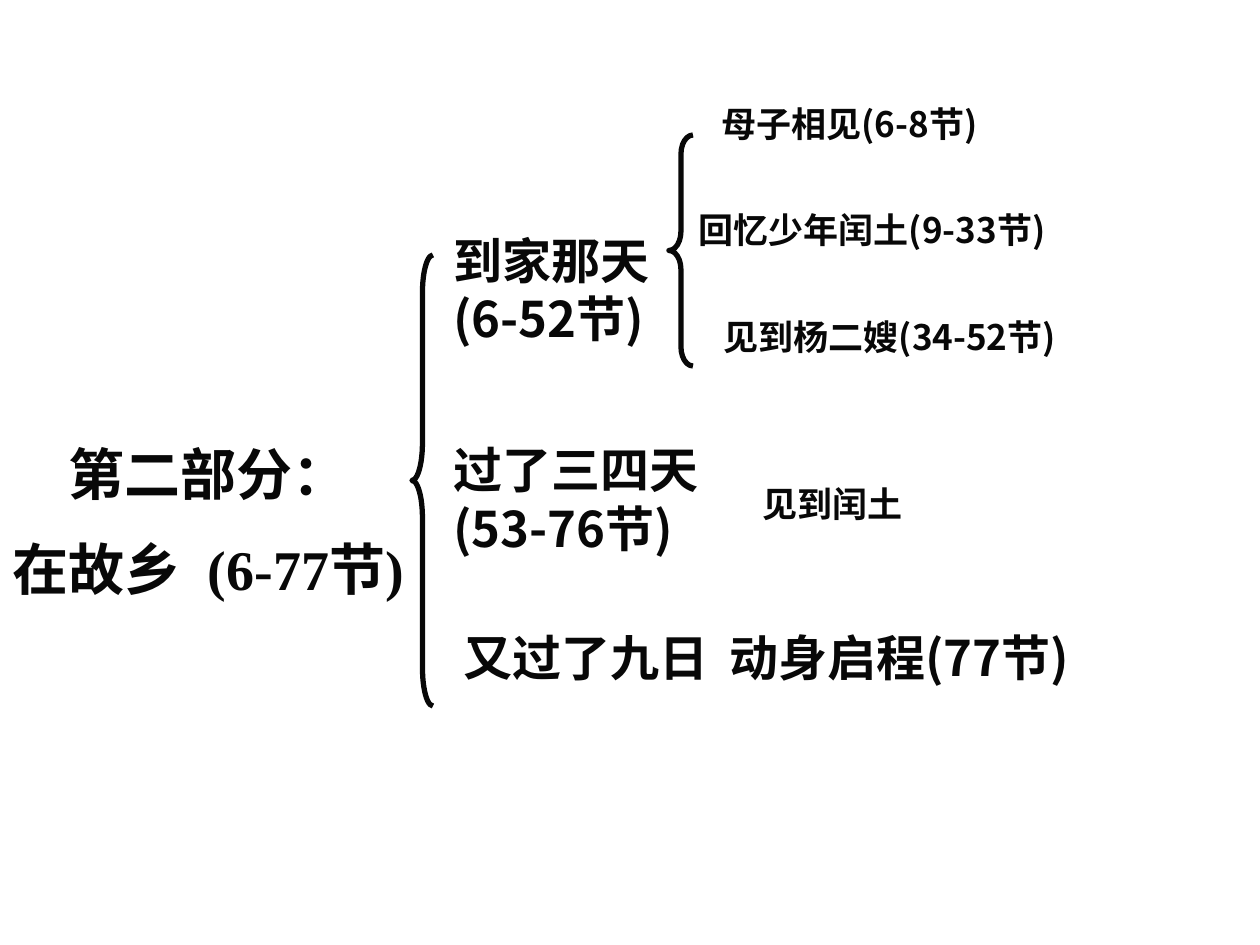
from pptx import Presentation
from pptx import util as u
from pptx.dml.color import RGBColor
from pptx.enum import shapes, text
from pptx.oxml.ns import qn
from lxml import etree

PX = 914400 // 126
COLORS = {"ink": "080808", "paper": "FFFFFF"}
SANS = "Noto Sans CJK SC"
SERIF = "Times New Roman"

# left, top, width, height, wording
DAYS = [
    (441, 224, 277, 130, ["到家那天(6-52节)"]),
    (441, 433, 358, 130, ["过了三四天(53-76节)"]),
    (451, 621, 764, 72, ["又过了九日", " ", "动身启程(77节)"]),
]
EVENTS = [
    (709, 96, 341, 54, "母子相见(6-8节)"),
    (686, 202, 420, 54, "回忆少年闰土(9-33节)"),
    (711, 309, 420, 54, "见到杨二嫂(34-52节)"),
    (750, 476, 240, 54, "见到闰土"),
]
# left, top, width, height, curl
BRACES = [(412, 255, 21, 451, 1.79), (669, 135, 24, 231, 0.8)]


def px(*lengths):
    return [u.Emu(length * PX) for length in lengths]


def ink():
    return RGBColor.from_string(COLORS["ink"])


def add_label(slide, box, paragraphs, size, font=SANS, align=text.PP_ALIGN.LEFT, gap=0):
    """Each paragraph is a list of pieces; a lone space is widened by gap points."""
    frame = slide.shapes.add_textbox(*px(*box)).text_frame
    frame.word_wrap = True
    for index, pieces in enumerate(paragraphs):
        paragraph = frame.paragraphs[0] if index == 0 else frame.add_paragraph()
        paragraph.alignment = align
        if index:
            paragraph.space_before = u.Pt(size / 2)
        for piece in pieces:
            run = paragraph.add_run()
            run.text = piece
            run.font.size = u.Pt(size)
            run.font.bold = True
            run.font.color.rgb = ink()
            run.font.name = font
            properties = run.font._element
            etree.SubElement(properties, qn("a:ea")).set("typeface", SANS)
            if piece == " ":
                properties.set("spc", str(gap * 100))


def add_brace(slide, box, curl):
    brace = slide.shapes.add_shape(shapes.MSO_SHAPE.LEFT_BRACE, *px(*box))
    brace.shadow.inherit = False
    brace.adjustments[0] = curl
    brace.adjustments[1] = 0.5
    brace.fill.background()
    brace.line.color.rgb = ink()
    brace.line.width = u.Pt(3)


def main():
    deck = Presentation()
    deck.slide_width, deck.slide_height = px(1260, 945)
    slide = deck.slides.add_slide(deck.slide_layouts[6])
    slide.background.fill.solid()
    slide.background.fill.fore_color.rgb = RGBColor.from_string(COLORS["paper"])

    part = [["第二部分："], ["在故乡", " ", "(6-77节)"]]
    add_label(slide, (0, 433, 417, 180), part, 32, SERIF, text.PP_ALIGN.CENTER, gap=8)
    for *box, pieces in DAYS:
        add_label(slide, box, [pieces], 28, gap=6)
    for *box, event in EVENTS:
        add_label(slide, box, [[event]], 20)
    for *box, curl in BRACES:
        add_brace(slide, box, curl)
    deck.save("out.pptx")


if __name__ == "__main__":
    main()
